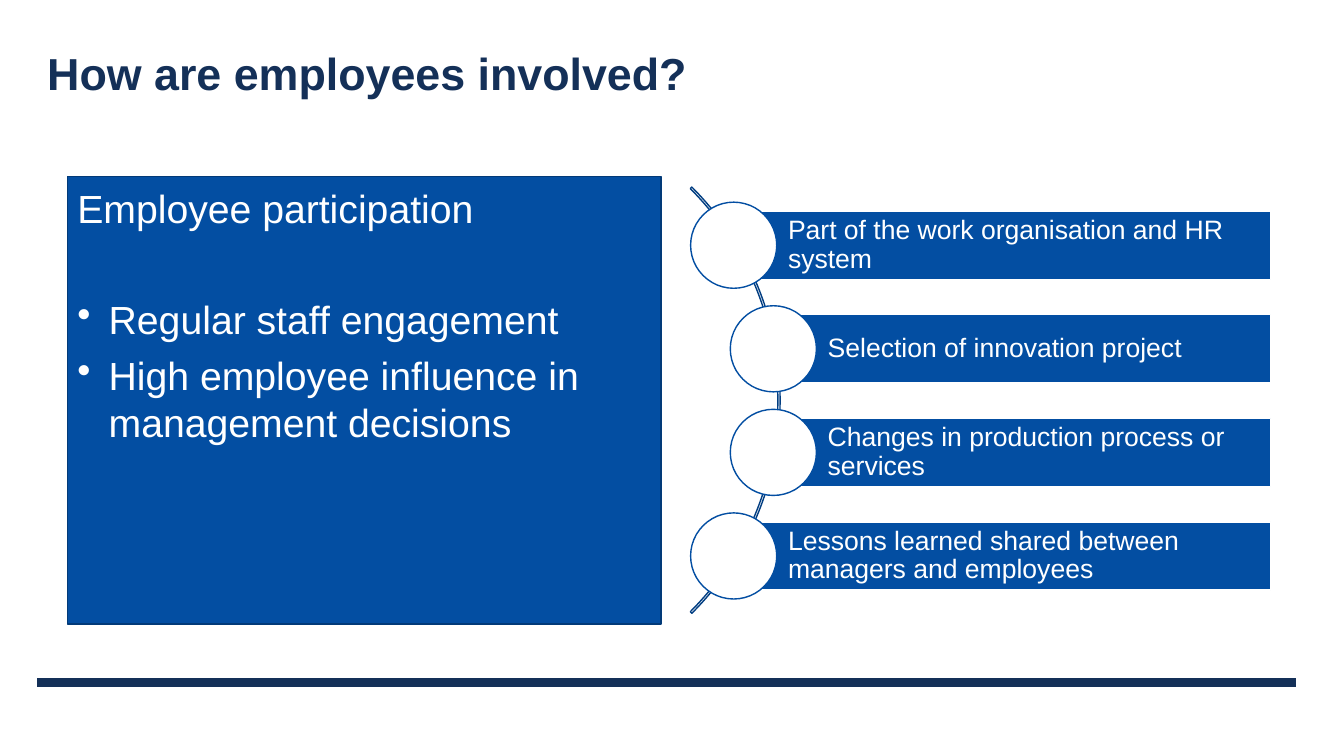
"""Build the slide on how employees are involved."""
import pptx
import pptx.dml.color
import pptx.enum.shapes
import pptx.enum.text
import pptx.oxml
import pptx.oxml.ns
import pptx.util
from dataclasses import dataclass

Cm = pptx.util.Cm
Pt = pptx.util.Pt
SHAPE = pptx.enum.shapes.MSO_SHAPE
ANCHOR = pptx.enum.text.MSO_ANCHOR

TITLE = "How are employees involved?"
PANEL_HEADING = "Employee participation"
PANEL_POINTS = ["Regular staff engagement", "High employee influence in management decisions"]
FORMS = [
    ("Part of the work organisation and HR system", 18.49),
    ("Selection of innovation project", 19.49),
    ("Changes in production process or services", 19.49),
    ("Lessons learned shared between managers and employees", 18.49),
]


@dataclass(frozen=True)
class Theme:
    font: str = "Arial"
    navy: str = "143058"
    blue: str = "034EA2"
    panel_edge: str = "023A78"
    arc_edge: str = "023E82"
    white: str = "FFFFFF"
    title_size: int = 32
    panel_size: int = 28
    form_size: int = 19


THEME = Theme()


def rgb(value):
    return pptx.dml.color.RGBColor.from_string(value)


def add_outlined(slide, kind, box, fill, edge):
    shape = slide.shapes.add_shape(kind, *[Cm(length) for length in box])
    shape.shadow.inherit = False
    if fill:
        shape.fill.solid()
        shape.fill.fore_color.rgb = rgb(fill)
    else:
        shape.fill.background()
    shape.line.color.rgb = rgb(edge)
    shape.line.width = Pt(1)
    return shape


def write(frame, text, *, size, color, bold=False, before=0, spacing=None, bullet=False, more=False):
    frame.word_wrap = True
    paragraph = frame.add_paragraph() if more else frame.paragraphs[0]
    paragraph.alignment = pptx.enum.text.PP_ALIGN.LEFT
    if spacing:
        paragraph.line_spacing = spacing
    if before:
        paragraph.space_before = Pt(before)
    if bullet:
        properties = paragraph._p.get_or_add_pPr()
        properties.set("marL", str(Cm(0.79)))
        properties.set("indent", str(Cm(-0.79)))
        properties.append(pptx.oxml.parse_xml(
            f'<a:buChar {pptx.oxml.ns.nsdecls("a")} char="•"/>'))
    run = paragraph.add_run()
    run.text = text
    run.font.name = THEME.font
    run.font.size = Pt(size)
    run.font.bold = bold
    run.font.color.rgb = rgb(color)


def add_title(slide):
    left, width = 0.94, 31.72
    rule_y = 17.2
    rule = slide.shapes.add_connector(
        pptx.enum.shapes.MSO_CONNECTOR.STRAIGHT,
        Cm(left), Cm(rule_y), Cm(left + width), Cm(rule_y))
    rule.line.color.rgb = rgb(THEME.navy)
    rule.line.width = Pt(6)
    rule._element.spPr.append(pptx.oxml.parse_xml(
        f'<a:effectLst {pptx.oxml.ns.nsdecls("a")}/>'))
    title = slide.shapes.add_textbox(Cm(left), Cm(0.76), Cm(width), Cm(2.16))
    title.text_frame.vertical_anchor = ANCHOR.MIDDLE
    write(title.text_frame, TITLE, size=THEME.title_size, color=THEME.navy, bold=True)


def add_panel(slide):
    panel = add_outlined(slide, SHAPE.RECTANGLE, (1.7, 4.45, 14.96, 11.28),
                         THEME.blue, THEME.panel_edge)
    frame = panel.text_frame
    frame.vertical_anchor = ANCHOR.TOP
    frame.margin_top = Cm(0.2)
    style = {"size": THEME.panel_size, "color": THEME.white}
    write(frame, PANEL_HEADING, **style)
    for point, gap in zip(PANEL_POINTS, (45.5, 6.5)):
        write(frame, point, before=gap, bullet=True, more=True, **style)


def add_forms(slide):
    arc = add_outlined(slide, SHAPE.BLOCK_ARC, (4.47, 2.49, 15.19, 15.19), None, THEME.arc_edge)
    for index, value in enumerate((189, 27, 0.00361)):
        arc.adjustments[index] = value
    right, first_centre, pitch = 32.02, 6.18, 2.61
    bar_height, diameter = 1.72, 2.17
    for row, (form, left) in enumerate(FORMS):
        centre = first_centre + row * pitch
        bar = add_outlined(slide, SHAPE.RECTANGLE,
                           (left, centre - bar_height / 2, right - left, bar_height),
                           THEME.blue, THEME.white)
        frame = bar.text_frame
        frame.vertical_anchor = ANCHOR.MIDDLE
        frame.margin_left = Cm(1.37)
        frame.margin_top = frame.margin_right = frame.margin_bottom = Cm(0.12)
        write(frame, form, size=THEME.form_size, color=THEME.white, spacing=0.9)
        add_outlined(slide, SHAPE.OVAL,
                     (left - diameter / 2, centre - diameter / 2, diameter, diameter),
                     THEME.white, THEME.blue)


def main():
    deck = pptx.Presentation()
    deck.slide_width, deck.slide_height = Cm(33.87), Cm(19.05)
    slide = deck.slides.add_slide(deck.slide_layouts[6])
    add_title(slide)
    add_panel(slide)
    add_forms(slide)
    deck.save("out.pptx")


if __name__ == "__main__":
    main()
